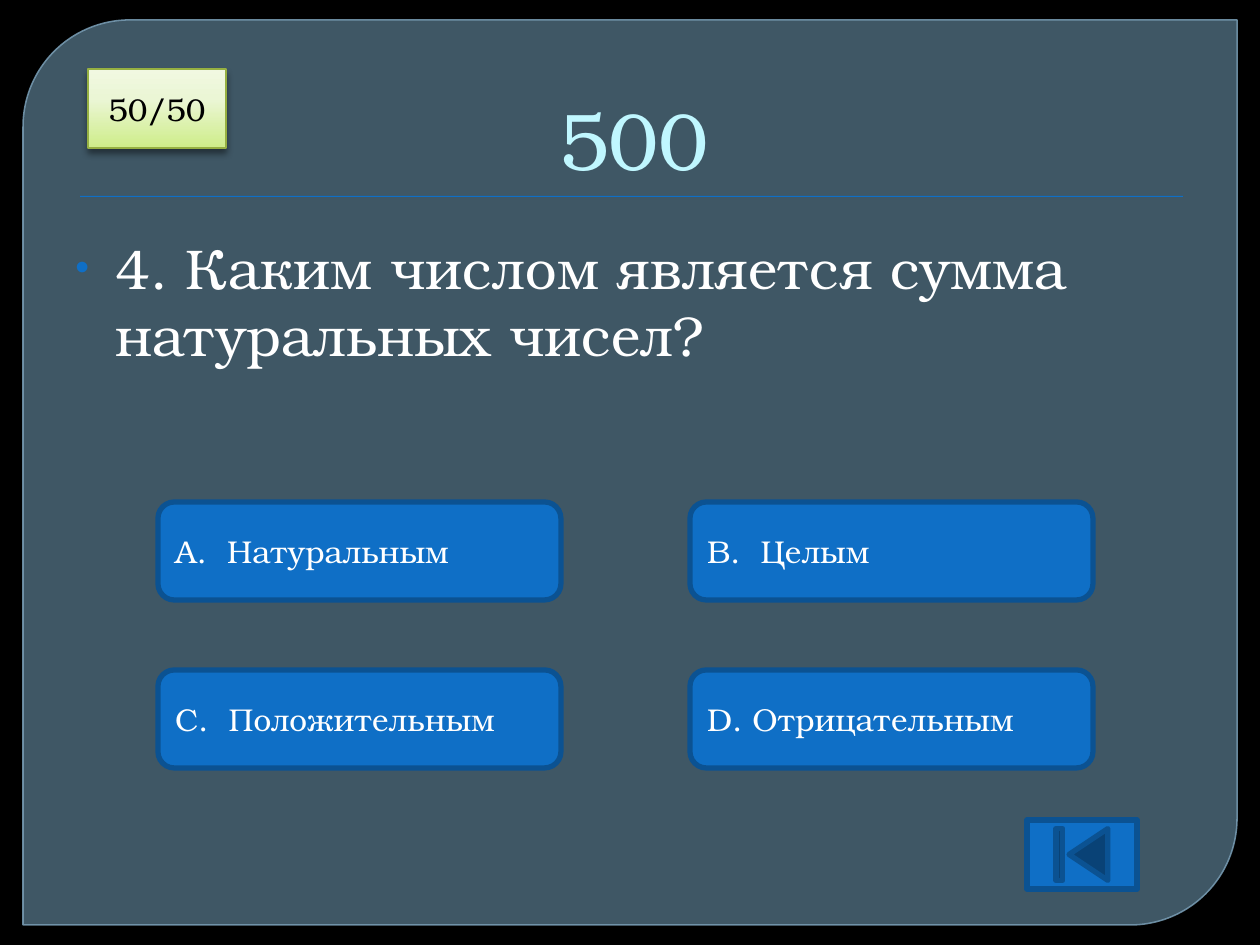
from dataclasses import dataclass
from typing import Optional

from lxml import etree
from pptx import Presentation
from pptx.dml.color import RGBColor
from pptx.enum.shapes import MSO_SHAPE
from pptx.enum.text import MSO_ANCHOR, PP_ALIGN
from pptx.oxml.ns import qn
from pptx.util import Emu, Pt

PANEL = MSO_SHAPE.ROUND_2_DIAG_RECTANGLE
RECTANGLE = MSO_SHAPE.RECTANGLE
ROUNDED = MSO_SHAPE.ROUNDED_RECTANGLE
BLANK_BUTTON = MSO_SHAPE.ACTION_BUTTON_CUSTOM
BEGINNING_BUTTON = MSO_SHAPE.ACTION_BUTTON_BEGINNING
LEFT, CENTER = PP_ALIGN.LEFT, PP_ALIGN.CENTER
TOP, MIDDLE, BOTTOM = MSO_ANCHOR.TOP, MSO_ANCHOR.MIDDLE, MSO_ANCHOR.BOTTOM
EMU_PER_PX = 914400 / 126


@dataclass(frozen=True)
class Theme:
    font: str = "TeX Gyre Bonum"
    background: str = "000000"
    panel: str = "61869C"
    panel_edge: str = "779BB2"
    accent: str = "0F6FC6"
    accent_edge: str = "0B5292"
    title: str = "C0F7FF"
    light: str = "FFFFFF"
    dark: str = "000000"
    hint_edge: str = "96B042"
    hint_stops: tuple = ((0, "CEED89"), (62, "EBF6D5"), (100, "F1F8E1"))
    title_size: int = 46
    question_size: int = 32
    button_size: int = 18


@dataclass(frozen=True)
class Box:
    left: int
    top: int
    width: int
    height: int


@dataclass(frozen=True)
class Label:
    text: str
    size: int
    color: str
    align: PP_ALIGN = LEFT
    anchor: MSO_ANCHOR = MIDDLE
    margin: int = 0
    bullet: Optional[str] = None


@dataclass(frozen=True)
class Shadow:
    opacity: int
    blur: int
    distance: int


@dataclass(frozen=True)
class Block:
    kind: MSO_SHAPE
    box: Box
    fill: str
    edge: Optional[str] = None
    edge_width: float = 3
    label: Optional[Label] = None
    shadow: Optional[Shadow] = None


THEME = Theme()


def px(length: int) -> Emu:
    return Emu(round(length * EMU_PER_PX))


def place(box: Box) -> tuple:
    return px(box.left), px(box.top), px(box.width), px(box.height)


def add_element(parent, tag: str, **attributes):
    return etree.SubElement(
        parent, qn(tag), {key: str(value) for key, value in attributes.items()}
    )


def add_color(parent, color: str, opacity: int = 100) -> None:
    add_element(add_element(parent, "a:srgbClr", val=color), "a:alpha", val=opacity * 1000)


def set_opacity(fill_owner, opacity: int) -> None:
    color = fill_owner.find(qn("a:solidFill")).find(qn("a:srgbClr"))
    add_element(color, "a:alpha", val=opacity * 1000)


def write(frame, label: Label) -> None:
    frame.word_wrap = True
    frame.vertical_anchor = label.anchor
    paragraph = frame.paragraphs[0]
    paragraph.alignment = label.align
    run = paragraph.add_run()
    run.text = label.text
    run.font.name = THEME.font
    run.font.size = Pt(label.size)
    run.font.color.rgb = RGBColor.from_string(label.color)
    properties = paragraph._p.get_or_add_pPr()
    properties.set("marL", str(px(label.margin)))
    if label.bullet:
        properties.set("indent", str(-px(label.margin)))
        add_color(add_element(properties, "a:buClr"), THEME.accent)
        add_element(properties, "a:buSzPct", val=70000)
        add_element(properties, "a:buFont", typeface="Arial")
        add_element(properties, "a:buChar", char=label.bullet)


def draw_block(slide, block: Block):
    shape = slide.shapes.add_shape(block.kind, *place(block.box))
    shape.fill.solid()
    shape.fill.fore_color.rgb = RGBColor.from_string(block.fill)
    if block.edge:
        shape.line.color.rgb = RGBColor.from_string(block.edge)
        shape.line.width = Pt(block.edge_width)
    else:
        shape.line.fill.background()
    shape.shadow.inherit = False
    if block.shadow:
        effects = shape._element.spPr.find(qn("a:effectLst"))
        outer = add_element(
            effects, "a:outerShdw", blurRad=Pt(block.shadow.blur),
            dist=Pt(block.shadow.distance), dir=90 * 60000, rotWithShape=0,
        )
        add_color(outer, THEME.dark, block.shadow.opacity)
    if block.label:
        write(shape.text_frame, block.label)
    return shape


def draw_panel(slide) -> None:
    panel = draw_block(slide, Block(PANEL, Box(23, 20, 1214, 905), THEME.panel, THEME.panel_edge, 0.87))
    panel.adjustments[0] = 0.118
    panel.adjustments[1] = 0
    set_opacity(panel._element.spPr, 65)
    set_opacity(panel._element.spPr.find(qn("a:ln")), 88)


def draw_text(slide, box: Box, label: Label) -> None:
    write(slide.shapes.add_textbox(*place(box)).text_frame, label)


def draw_answers(slide) -> None:
    answers = (("A.  Натуральным", "B.  Целым"), ("C.  Положительным", "D. Отрицательным"))
    for row, pair in enumerate(answers):
        for column, answer in enumerate(pair):
            box = Box(158 + 532 * column, 502 + 168 * row, 403, 98)
            label = Label(answer, THEME.button_size, THEME.light)
            draw_block(slide, Block(ROUNDED, box, THEME.accent, THEME.accent_edge, label=label))


def draw_hint(slide) -> None:
    label = Label("50/50", THEME.button_size, THEME.dark, CENTER)
    hint = draw_block(slide, Block(
        BLANK_BUTTON, Box(88, 69, 138, 79), THEME.panel, THEME.hint_edge, 0.75, label, Shadow(43, 4, 3),
    ))
    hint.fill.gradient()
    hint.fill.gradient_angle = 90
    stops = hint._element.spPr.find(qn("a:gradFill")).find(qn("a:gsLst"))
    for stop in list(stops):
        stops.remove(stop)
    for position, color in THEME.hint_stops:
        add_color(add_element(stops, "a:gs", pos=position * 1000), color)


def main() -> None:
    presentation = Presentation()
    presentation.slide_width, presentation.slide_height = px(1260), px(945)
    slide = presentation.slides.add_slide(presentation.slide_layouts[6])
    slide.background.fill.solid()
    slide.background.fill.fore_color.rgb = RGBColor.from_string(THEME.background)

    draw_panel(slide)
    draw_block(slide, Block(RECTANGLE, Box(80, 196, 1103, 1), THEME.accent, shadow=Shadow(75, 1, 1)))
    draw_text(slide, Box(63, 35, 1134, 158),
              Label("500", THEME.title_size, THEME.title, CENTER, BOTTOM, margin=8))
    draw_text(slide, Box(63, 227, 1134, 624),
              Label("4. Каким числом является сумма натуральных чисел?",
                    THEME.question_size, THEME.light, LEFT, TOP, margin=40, bullet="•"))
    draw_answers(slide)
    draw_hint(slide)
    draw_block(slide, Block(BEGINNING_BUTTON, Box(1027, 820, 110, 69), THEME.accent, THEME.accent_edge))
    presentation.save("out.pptx")


if __name__ == "__main__":
    main()
